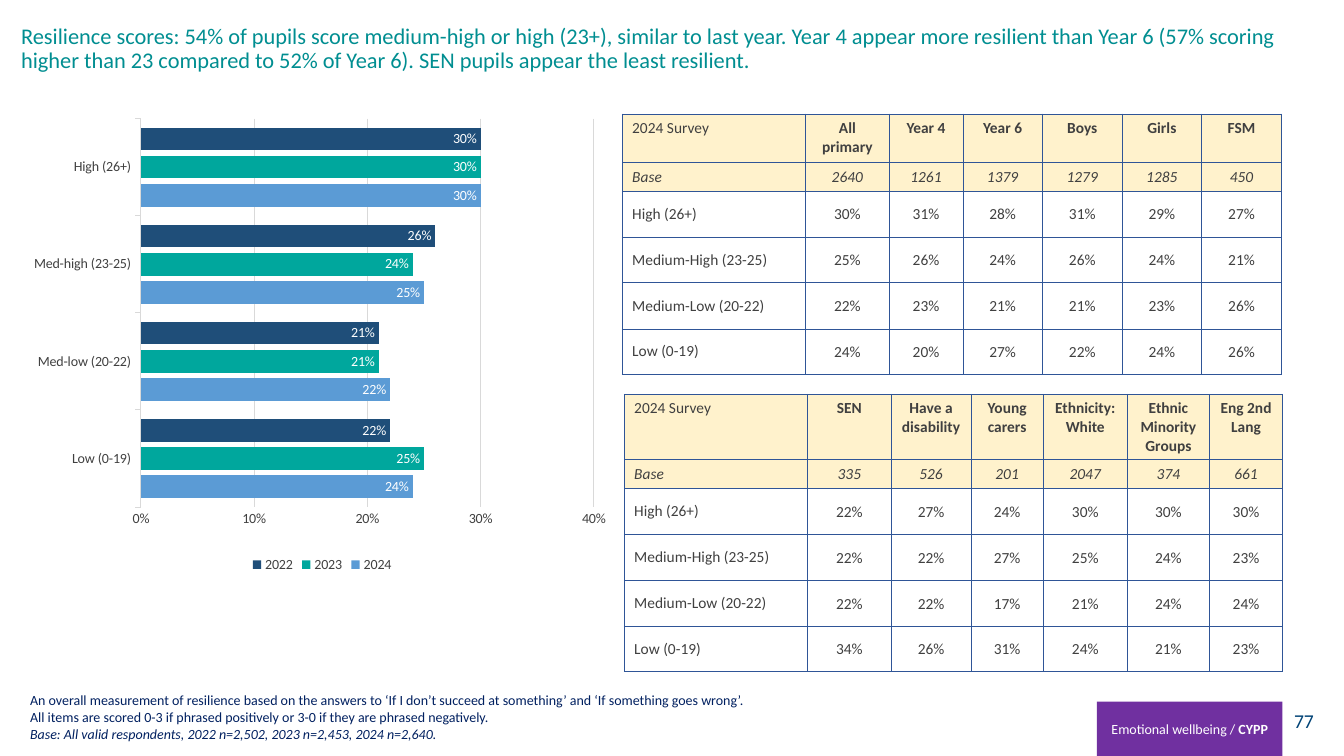
from lxml.etree import SubElement
from pptx import Presentation
from pptx.chart.data import CategoryChartData
from pptx.dml.color import RGBColor
from pptx.enum.chart import (XL_CHART_TYPE, XL_LABEL_POSITION,
                             XL_LEGEND_POSITION, XL_TICK_MARK)
from pptx.enum.shapes import MSO_SHAPE
from pptx.enum.text import MSO_ANCHOR, MSO_AUTO_SIZE, PP_ALIGN
from pptx.oxml import parse_xml
from pptx.oxml.ns import nsdecls, qn
from pptx.util import Pt

PX = 9144  # 100 px to the inch
HUES = {
    "title": "008E91", "page": "004376", "note": "002060", "tag": "7030A0",
    "text": "404040", "grid": "D9D9D9", "rule": "2F5597", "head": "FFF2CC",
    "white": "FFFFFF", "2024": "5B9BD5", "2023": "00A79D", "2022": "1F4E79",
}
LEFT, MID, RIGHT = PP_ALIGN.LEFT, PP_ALIGN.CENTER, PP_ALIGN.RIGHT
TOP, HALF, LOW = MSO_ANCHOR.TOP, MSO_ANCHOR.MIDDLE, MSO_ANCHOR.BOTTOM


def hue(name):
    return RGBColor.from_string(HUES[name])


def apply(item, **form):
    for key, val in form.items():
        setattr(item, key, val)


class Deck:
    face = "Calibri"

    def __init__(self, wide, high):
        self.prs = Presentation()
        apply(self.prs, slide_width=wide * PX, slide_height=high * PX)
        self.slide = self.prs.slides.add_slide(self.prs.slide_layouts[5])
        self.shapes = self.slide.shapes

    def font(self, font, size, tone, **form):
        apply(font, name=self.face, size=Pt(size), **form)
        font.color.rgb = hue(tone)

    def words(self, frame, lines, size, tone, align=LEFT, anchor=TOP, gap=1.0):
        """Each line is a list of (text, font form) runs."""
        apply(frame, word_wrap=True, vertical_anchor=anchor)
        for i, line in enumerate(lines):
            para = frame.add_paragraph() if i else frame.paragraphs[0]
            apply(para, alignment=align, line_spacing=gap)
            for text, form in line:
                run = para.add_run()
                run.text = text
                self.font(run.font, size, tone, **form)

    def title(self, box, text, size, tone):
        shape = self.shapes.title
        sides = ("left", "top", "width", "height")
        apply(shape, **{k: v * PX for k, v in zip(sides, box)})
        shape.text_frame.auto_size = MSO_AUTO_SIZE.NONE
        self.words(shape.text_frame, [[(text, {})]], size, tone, gap=0.9)

    def text(self, box, lines, size, tone, **form):
        shape = self.shapes.add_textbox(*(v * PX for v in box))
        self.words(shape.text_frame, lines, size, tone, **form)

    def block(self, box, fill, lines, size, tone, **form):
        shape = self.shapes.add_shape(MSO_SHAPE.RECTANGLE, *(v * PX for v in box))
        shape.shadow.inherit = False
        shape.fill.solid()
        shape.fill.fore_color.rgb = hue(fill)
        shape.line.fill.background()
        self.words(shape.text_frame, lines, size, tone, **form)

    def chart(self, box, cats, rows, plot):
        data = CategoryChartData(number_format="0%")
        data.categories = cats
        for name, vals in rows.items():
            data.add_series(name, [v / 100 for v in vals])
        chart = self.shapes.add_chart(XL_CHART_TYPE.BAR_CLUSTERED,
                                      *(v * PX for v in box), data).chart
        apply(chart, has_title=False, has_legend=True)
        self.font(chart.font, 10, "text")
        apply(chart.legend, position=XL_LEGEND_POSITION.BOTTOM,
              include_in_layout=False)
        self.font(chart.legend.font, 10, "text")

        # Axes
        cat, val = chart.category_axis, chart.value_axis
        none = XL_TICK_MARK.NONE
        apply(cat, major_tick_mark=XL_TICK_MARK.OUTSIDE, minor_tick_mark=none)
        apply(val, major_tick_mark=none, minor_tick_mark=none, major_unit=0.1,
              minimum_scale=0, maximum_scale=0.4, has_major_gridlines=True)
        apply(val.tick_labels, number_format="0%", number_format_is_linked=False)
        val.format.line.fill.background()
        for line in (cat.format.line, val.major_gridlines.format.line):
            line.color.rgb = hue("grid")
            line.width = Pt(0.75)
        for axis in (cat, val):
            self.font(axis.tick_labels.font, 10, "text")

        # Bars
        bars = chart.plots[0]
        apply(bars, gap_width=80, overlap=-25, vary_by_categories=False)
        for row in bars.series:
            row.format.fill.solid()
            row.format.fill.fore_color.rgb = hue(row.name)
            tags = row.data_labels
            apply(tags, show_value=True, position=XL_LABEL_POSITION.INSIDE_END,
                  number_format="0%", number_format_is_linked=False)
            self.font(tags.font, 10, "white")

        # Fixed plot area
        area = bars._element.getparent()
        for old in area.findall(qn("c:layout")):
            area.remove(old)
        sides = "".join(f'<c:{k} val="{v}"/>' for k, v in plot.items())
        area.insert(0, parse_xml(
            f'<c:layout {nsdecls("c")}><c:manualLayout>'
            '<c:layoutTarget val="inner"/><c:xMode val="edge"/>'
            f'<c:yMode val="edge"/>{sides}</c:manualLayout></c:layout>'))

    def edge(self, cell):
        props = cell._tc.get_or_add_tcPr()
        for side in ("a:lnL", "a:lnR", "a:lnT", "a:lnB"):
            line = SubElement(props, qn(side), w=str(Pt(0.5)))
            fill = SubElement(line, qn("a:solidFill"))
            SubElement(fill, qn("a:srgbClr"), val=HUES["rule"])

    def table(self, left, top, wides, highs, rows):
        grid = self.shapes.add_table(
            len(rows), len(wides), left * PX, top * PX,
            sum(wides) * PX, sum(highs) * PX).table
        apply(grid, first_row=False, horz_banding=False)
        for col, wide in zip(grid.columns, wides):
            col.width = wide * PX
        for row, high in zip(grid.rows, highs):
            row.height = high * PX
        for r, row in enumerate(rows):
            for c, text in enumerate(row):
                cell = grid.cell(r, c)
                self.edge(cell)
                if r < 2:
                    cell.fill.solid()
                    cell.fill.fore_color.rgb = hue("head")
                else:
                    cell.fill.background()
                    if c:
                        apply(cell, margin_left=PX, margin_right=PX,
                              margin_top=PX, margin_bottom=0)
                form = {"bold": r == 0 and c > 0, "italic": r == 1}
                self.words(cell.text_frame, [[(text, form)]], 11, "text",
                           align=MID if c else LEFT)
                cell.vertical_anchor = HALF if r else TOP


def rows(heads, bases, *scores):
    names = ("High (26+)", "Medium-High (23-25)", "Medium-Low (20-22)", "Low (0-19)")
    body = [[n] + [f"{v}%" for v in vals] for n, vals in zip(names, scores)]
    return [["2024 Survey", *heads], ["Base", *map(str, bases)], *body]


def main():
    deck = Deck(1333, 750)

    # Heading and page number
    deck.block((1254, 695, 59, 40), "white", [[("77", {})]], 14, "page",
               align=RIGHT, anchor=HALF)
    deck.title((11, 20, 1286, 98), "Resilience scores: 54% of pupils score medium-high or "
               "high (23+), similar to last year. Year 4 appear more resilient than Year 6 "
               "(57% scoring higher than 23 compared to 52% of Year 6). SEN pupils appear "
               "the least resilient.", 16, "title")

    # Scores by year
    deck.chart((20, 113, 599, 459),
               ["Low (0-19)", "Med-low (20-22)", "Med-high (23-25)", "High (26+)"],
               {"2024": (24, 22, 25, 30), "2023": (25, 21, 24, 30),
                "2022": (22, 21, 26, 30)},
               {"x": 0.2, "y": 0.01, "w": 0.75, "h": 0.84})

    # Notes and section tag
    deck.text((20, 680, 1038, 61), [
        [("An overall measurement of resilience based on the answers to ‘If I don’t "
          "succeed at something’ and ‘If something goes wrong’.", {})],
        [("All items are scored 0-3 if phrased positively or 3-0 if they are phrased "
          "negatively.", {})],
        [("Base: All valid respondents, 2022 n=2,502, 2023 n=2,453, 2024 n=2,640.",
          {"italic": True})],
    ], 10, "note", anchor=LOW)
    deck.block((1088, 696, 184, 54), "tag",
               [[("Emotional wellbeing / ", {}), ("CYPP", {"bold": True})]],
               10, "white", align=MID, anchor=HALF)

    # Scores by group
    body = [28, 46, 45, 46, 45]
    deck.table(617, 113, [182, 83, 73, 79, 79, 79, 79], [48, *body], rows(
        ("All primary", "Year 4", "Year 6", "Boys", "Girls", "FSM"),
        (2640, 1261, 1379, 1279, 1285, 450),
        (30, 31, 28, 31, 29, 27), (25, 26, 24, 26, 24, 21),
        (22, 23, 21, 21, 23, 26), (24, 20, 27, 22, 24, 26)))
    deck.table(619, 391, [182, 83, 79, 72, 83, 82, 72], [65, *body], rows(
        ("SEN", "Have a disability", "Young carers", "Ethnicity: White",
         "Ethnic Minority Groups", "Eng 2nd Lang"),
        (335, 526, 201, 2047, 374, 661),
        (22, 27, 24, 30, 30, 30), (22, 22, 27, 25, 24, 23),
        (22, 22, 17, 21, 24, 24), (34, 26, 31, 24, 21, 23)))

    deck.prs.save("out.pptx")


if __name__ == "__main__":
    main()
